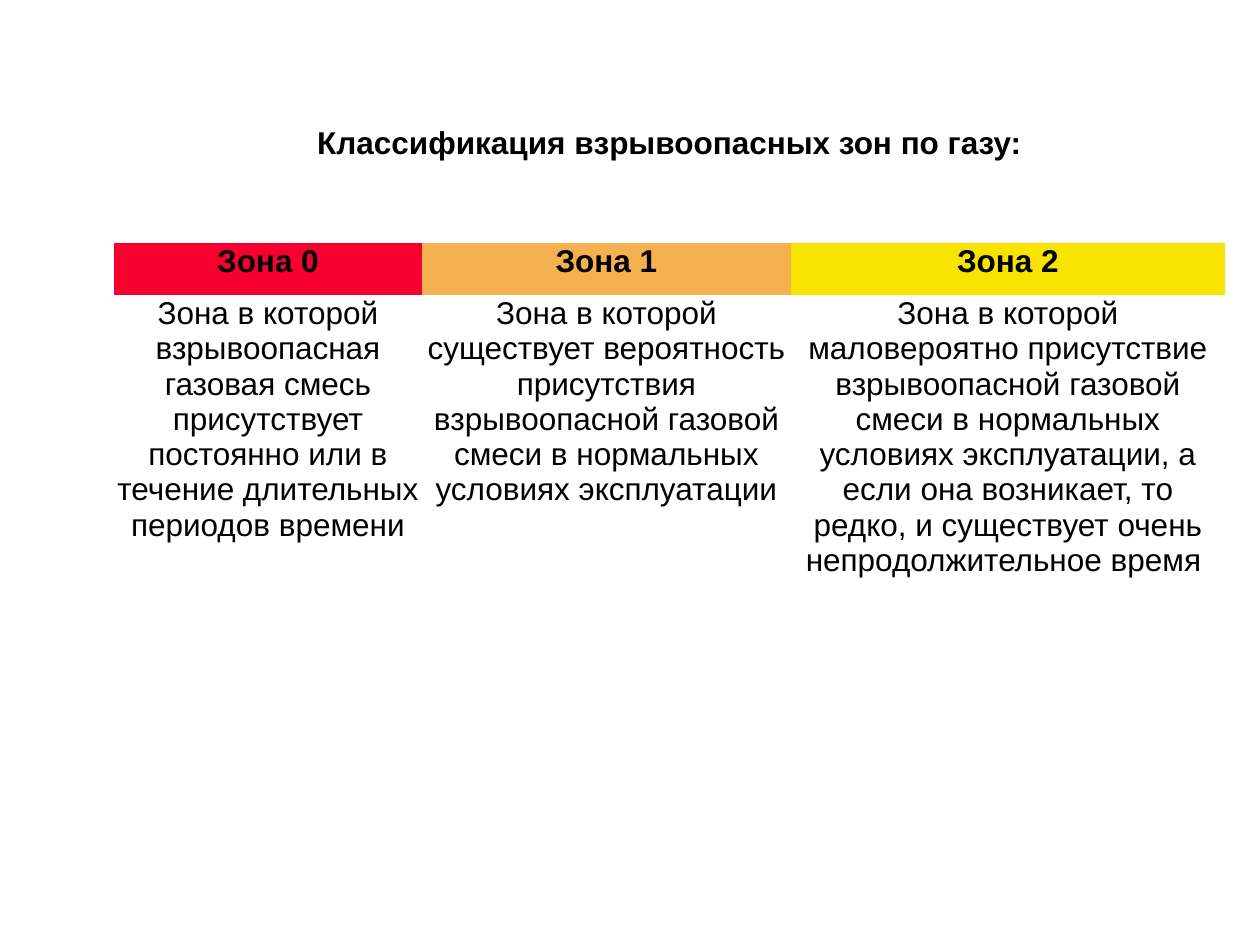
import dataclasses

import lxml.etree
import pptx
import pptx.dml.color
import pptx.enum.text
import pptx.oxml.ns
import pptx.util

SCALE = 914400 / 126


@dataclasses.dataclass(frozen=True)
class Theme:
    font: str = "Arial"
    size: int = 18
    ink: str = "000000"
    red: str = "F70030"
    orange: str = "F5B150"
    yellow: str = "F6E300"


@dataclasses.dataclass(frozen=True)
class Zone:
    name: str
    text: str
    fill: str
    width: int


THEME = Theme()
TITLE = "Классификация взрывоопасных зон по газу:"
ZONES = [
    Zone("Зона 0",
         "Зона в которой взрывоопасная газовая смесь присутствует "
         "постоянно или в течение длительных периодов времени",
         THEME.red, 308),
    Zone("Зона 1",
         "Зона в которой существует вероятность присутствия "
         "взрывоопасной газовой смеси в нормальных условиях эксплуатации",
         THEME.orange, 369),
    Zone("Зона 2",
         "Зона в которой маловероятно присутствие взрывоопасной газовой "
         "смеси в нормальных условиях эксплуатации, а если она возникает, "
         "то редко, и существует очень непродолжительное время ",
         THEME.yellow, 434),
]
ROWS = [198, 52, 534]
LEFT, TOP = 114, 45


def px(count: int) -> pptx.util.Emu:
    return pptx.util.Emu(round(count * SCALE))


def color(code: str) -> pptx.dml.color.RGBColor:
    return pptx.dml.color.RGBColor.from_string(code)


def clear(cell) -> None:
    props = cell._tc.get_or_add_tcPr()
    for spot, side in enumerate(("lnL", "lnR", "lnT", "lnB")):
        line = lxml.etree.Element(pptx.oxml.ns.qn(f"a:{side}"), w="0")
        lxml.etree.SubElement(line, pptx.oxml.ns.qn("a:noFill"))
        props.insert(spot, line)


def write(cell, text: str, bold: bool = False, fill: str = "", inset: int = 1) -> None:
    cell.margin_left = cell.margin_right = px(inset)
    cell.margin_top = cell.margin_bottom = px(inset)
    cell.text_frame.text = text
    para = cell.text_frame.paragraphs[0]
    para.alignment = pptx.enum.text.PP_ALIGN.CENTER
    for run in para.runs:
        run.font.name = THEME.font
        run.font.size = pptx.util.Pt(THEME.size)
        run.font.bold = bold
        run.font.color.rgb = color(THEME.ink)
    if fill:
        cell.fill.solid()
        cell.fill.fore_color.rgb = color(fill)


def draw(slide) -> None:
    width = sum(zone.width for zone in ZONES)
    frame = slide.shapes.add_table(
        len(ROWS), len(ZONES), px(LEFT), px(TOP), px(width), px(sum(ROWS)))
    table = frame.table
    table.first_row = False
    table.horz_banding = False
    for row, height in zip(table.rows, ROWS):
        row.height = px(height)
    for cell in table.iter_cells():
        cell.fill.background()
        clear(cell)

    head = table.cell(0, 0)
    head.merge(table.cell(0, len(ZONES) - 1))
    write(head, TITLE, bold=True, inset=0)
    head.vertical_anchor = pptx.enum.text.MSO_ANCHOR.MIDDLE

    for col, zone in enumerate(ZONES):
        table.columns[col].width = px(zone.width)
        write(table.cell(1, col), zone.name, bold=True, fill=zone.fill)
        write(table.cell(2, col), zone.text)


def main() -> None:
    deck = pptx.Presentation()
    deck.slide_width = px(1260)
    deck.slide_height = px(945)
    draw(deck.slides.add_slide(deck.slide_layouts[6]))
    deck.save("out.pptx")


if __name__ == "__main__":
    main()
